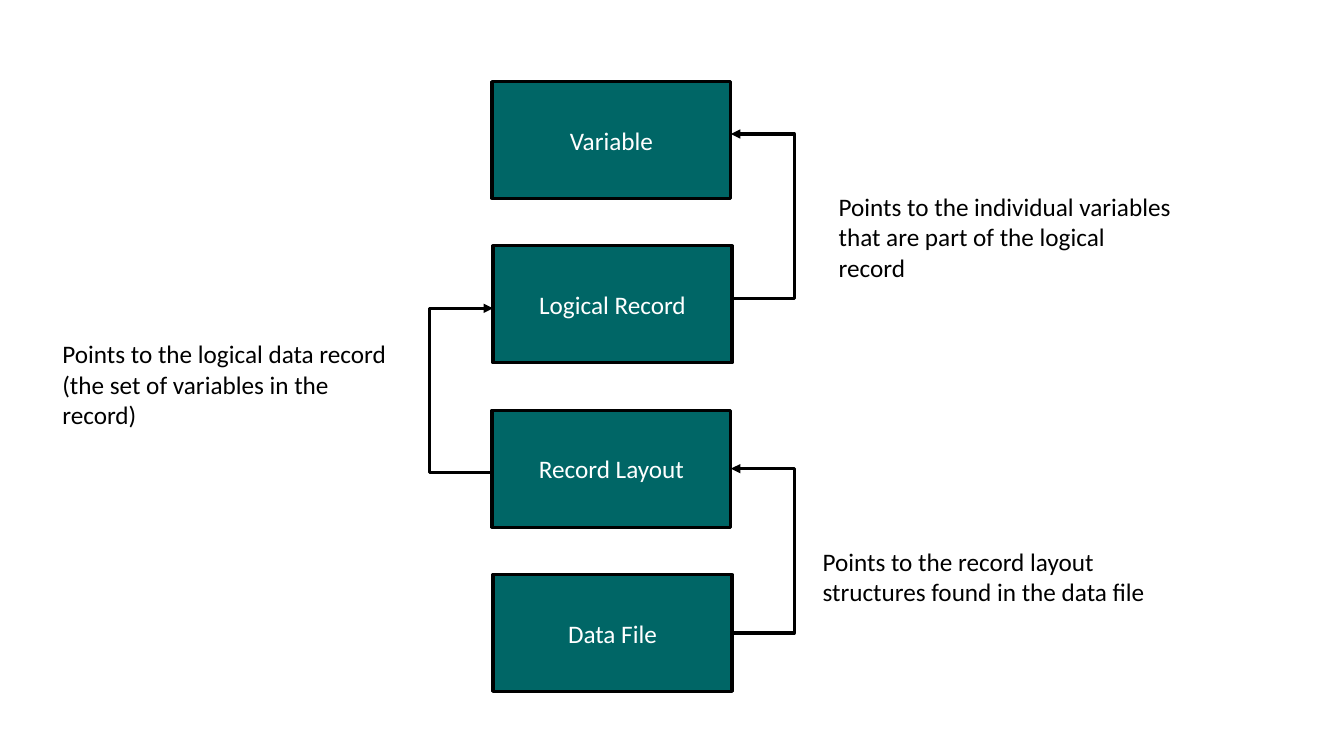
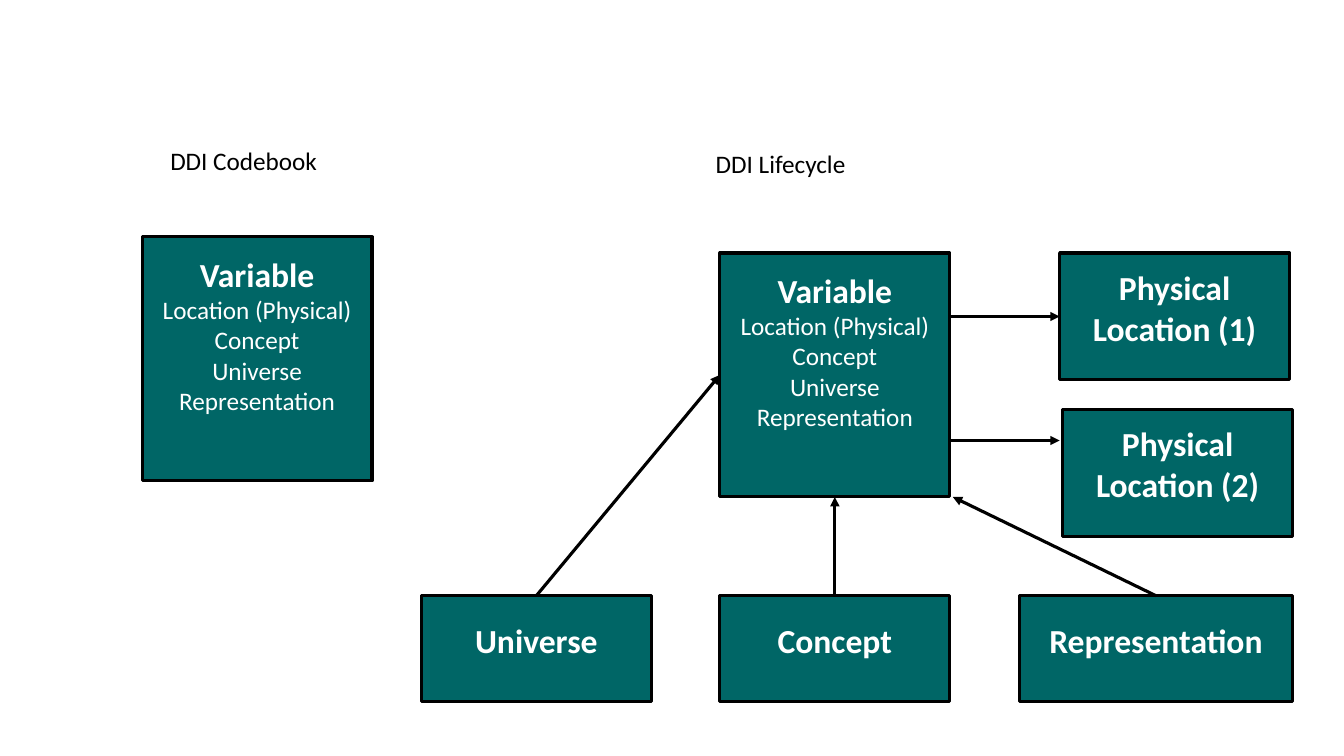
from lxml.etree import SubElement
from pptx import Presentation
from pptx.dml.color import RGBColor
from pptx.enum.shapes import MSO_CONNECTOR as Connector, MSO_SHAPE as Shape
from pptx.enum.text import MSO_ANCHOR as Anchor, MSO_AUTO_SIZE as AutoSize, PP_ALIGN as Align
from pptx.oxml.ns import qn
from pptx.util import Emu, Pt

PX = 9144
FONT = "Calibri"
COLORS = {"box": "006666", "line": "000000", "text": "000000", "box_text": "FFFFFF"}
TOP, LEFT, BOTTOM = 0, 1, 2
BODY_SIZE, HEADING_SIZE, LINE_WIDTH = 18, 24, 2.25
VARIABLE_PARTS = ["Location (Physical)", "Concept", "Universe", "Representation"]


def px(*lengths):
    return [Emu(length * PX) for length in lengths]


def color(name):
    return RGBColor.from_string(COLORS[name])


def style_line(line):
    line.color.rgb = color("line")
    line.width = Pt(LINE_WIDTH)


def style_para(para, size, color_name, bold=False, align=Align.LEFT):
    para.alignment = align
    for span in para.runs:
        span.font.name = FONT
        span.font.size = Pt(size)
        span.font.bold = bold
        span.font.color.rgb = color(color_name)


def add_label(page, text, left, top, width, height, wrap=True):
    label = page.shapes.add_textbox(*px(left, top, width, height))
    frame = label.text_frame
    frame.word_wrap = wrap
    frame.auto_size = AutoSize.SHAPE_TO_FIT_TEXT
    frame.text = text
    style_para(frame.paragraphs[0], BODY_SIZE, "text")


def add_box(page, left, top, width, height):
    box = page.shapes.add_shape(Shape.RECTANGLE, *px(left, top, width, height))
    box.shadow.inherit = False
    box.fill.solid()
    box.fill.fore_color.rgb = color("box")
    style_line(box.line)
    box.text_frame.word_wrap = True
    return box


def add_plain_box(page, text, left, top, width, height):
    box = add_box(page, left, top, width, height)
    box.text_frame.vertical_anchor = Anchor.MIDDLE
    box.text_frame.text = text
    style_para(box.text_frame.paragraphs[0], BODY_SIZE, "box_text", align=Align.CENTER)


def add_headed_box(page, heading, left, top, width, height, inset, parts=()):
    box = add_box(page, left, top, width, height)
    frame = box.text_frame
    frame.vertical_anchor = Anchor.TOP
    frame.margin_top = px(inset)[0]
    frame.text = "\n".join([heading, *parts])
    for index, para in enumerate(frame.paragraphs):
        is_heading = index == 0
        size = HEADING_SIZE if is_heading else BODY_SIZE
        style_para(para, size, "box_text", is_heading, Align.CENTER)
    return box


def add_arrow(page, start, end, kind=Connector.STRAIGHT):
    arrow = page.shapes.add_connector(kind, *px(*start, *end))
    style_line(arrow.line)
    properties = arrow.element.spPr
    SubElement(properties.find(qn("a:ln")), qn("a:tailEnd"), type="triangle")
    SubElement(properties, qn("a:effectLst"))
    return arrow


def add_loop(page, start, end, reach):
    arrow = add_arrow(page, start, end, Connector.ELBOW)
    geometry = arrow.element.spPr.find(qn("a:prstGeom"))
    guides = geometry.find(qn("a:avLst"))
    if guides is None:
        guides = SubElement(geometry, qn("a:avLst"))
    ratio = -reach * 100000 // abs(end[0] - start[0])
    SubElement(guides, qn("a:gd"), name="adj1", fmla=f"val {ratio}")


def add_record_chain(page, left, top):
    width, height, pitch, reach = 237, 116, 163, 63
    right = left + width
    for index, name in enumerate(["Variable", "Logical Record", "Record Layout", "Data File"]):
        add_plain_box(page, name, left + index % 2, top + index * pitch, width, height)

    middles = [top + index * pitch + height // 2 for index in range(4)]
    add_loop(page, (right + 1, middles[3]), (right, middles[2]), reach)
    add_loop(page, (left, middles[2] + 4), (left + 1, middles[1] + 4), reach)
    add_loop(page, (right + 1, middles[1] - 6), (right, middles[0] - 6), reach)

    add_label(page, "Points to the record layout structures found in the data file",
              left + 318, top + 456, 393, 71)
    add_label(page, "Points to the logical data record (the set of variables in the record)",
              left - 436, top + 250, 345, 101)
    add_label(page, "Points to the individual variables that are part of the logical record",
              left + 334, top + 104, 350, 101)


def add_variable(page, left, top):
    return add_headed_box(page, "Variable", left, top, 228, 242, 17, VARIABLE_PARTS)


def add_codebook(page, left, top):
    add_label(page, "DDI Codebook", left + 18, top, 168, 40, wrap=False)
    add_variable(page, left, top + 96)


def add_lifecycle(page, left, top):
    center, width = left + 296, 228
    variable_top, base_top = top + 109, top + 449
    variable_right, variable_bottom = center + width, variable_top + 242

    add_label(page, "DDI Lifecycle", left + 282, top, 151, 40, wrap=False)
    variable = add_variable(page, center, variable_top)
    universe, concept, representation = [
        add_headed_box(page, name, left + offset, base_top, box_width, 105, 24)
        for name, offset, box_width in [
            ("Universe", 0, width), ("Concept", 296, width), ("Representation", 593, 271)]
    ]
    location, _ = [
        add_headed_box(page, f"Physical Location ({number})", left + x, top + y, width, 126, 14)
        for number, x, y in [(1, 633, 109), (2, 636, 264)]
    ]

    for y, target in [(172, location), (295, None)]:
        arrow = add_arrow(page, (variable_right, top + y), (left + 633, top + y))
        if target is not None:
            arrow.end_connect(target, LEFT)
    corner = (variable_right + 3, variable_bottom)
    for source, side in [(representation, None), (concept, BOTTOM), (universe, LEFT)]:
        arrow = add_arrow(page, corner, corner)
        arrow.begin_connect(source, TOP)
        if side is not None:
            arrow.end_connect(variable, side)


def main():
    deck = Presentation()
    deck.slide_width, deck.slide_height = px(1333, 750)
    blank = deck.slide_layouts[6]

    add_record_chain(deck.slides.add_slide(blank), 488, 81)

    comparison = deck.slides.add_slide(blank)
    add_codebook(comparison, 141, 139)
    add_lifecycle(comparison, 418, 142)

    deck.save("out.pptx")


if __name__ == "__main__":
    main()
